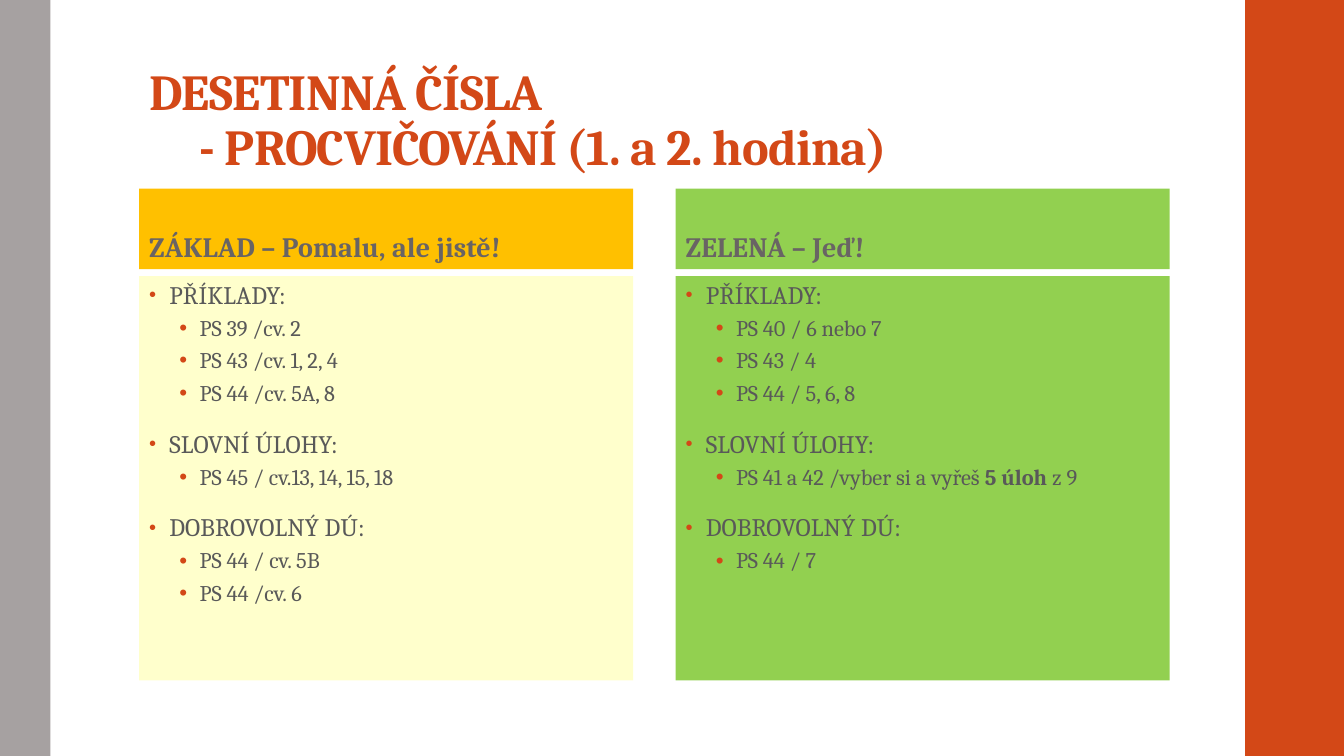
from lxml import etree
from pptx import Presentation
from pptx.dml.color import RGBColor
from pptx.enum.shapes import MSO_SHAPE
from pptx.enum.text import MSO_ANCHOR, MSO_AUTO_SIZE, PP_ALIGN
from pptx.oxml.ns import qn
from pptx.util import Inches, Pt

RECT = MSO_SHAPE.RECTANGLE
TOP, BOTTOM = MSO_ANCHOR.TOP, MSO_ANCHOR.BOTTOM
LEFT = PP_ALIGN.LEFT
NO_FIT = MSO_AUTO_SIZE.NONE

WIDTH, HEIGHT = 13.33, 7.5
COL_LEFT, COL_WIDTH, COL_STEP = 1.38, 4.9, 5.32
HEAD_ROW = (1.87, 0.8)
LIST_ROW = (2.74, 4.01)
ACCENT, GREY, HEAD_INK, INK = "D34817", "A6A1A1", "696464", "595959"

# Heading, heading fill, list fill, topics with their tasks; *bold* marks bold
COLUMNS = [
    ("ZÁKLAD – Pomalu, ale jistě!", "FFC000", "FFFFCC", {
        "PŘÍKLADY:": ["PS 39 /cv. 2", "PS 43 /cv. 1, 2, 4", "PS 44 /cv. 5A, 8"],
        "SLOVNÍ ÚLOHY:": ["PS 45 / cv.13, 14, 15, 18"],
        "DOBROVOLNÝ DÚ:": ["PS 44 / cv. 5B", "PS 44 /cv. 6"],
    }),
    ("ZELENÁ – Jeď!", "92D050", "92D050", {
        "PŘÍKLADY:": ["PS 40 / 6 nebo 7", "PS 43 / 4", "PS 44 / 5, 6, 8"],
        "SLOVNÍ ÚLOHY:": ["PS 41 a 42 /vyber si a vyřeš *5 úloh *z 9"],
        "DOBROVOLNÝ DÚ:": ["PS 44 / 7"],
    }),
]


def paint(fill, color):
    fill.solid()
    fill.fore_color.rgb = RGBColor.from_string(color)


def place(shape, left, top, width, height):
    shape.left, shape.top = Inches(left), Inches(top)
    shape.width, shape.height = Inches(width), Inches(height)


def add_bar(slide, left, width, color):
    """Add a full-height side bar behind everything else."""
    bar = slide.shapes.add_shape(
        RECT, Inches(left), 0, Inches(width), Inches(HEIGHT))
    bar.shadow.inherit = False
    paint(bar.fill, color)
    bar.line.fill.background()
    slide.shapes._spTree.insert(2, bar._element)


def set_frame(shape, anchor):
    frame = shape.text_frame
    frame.word_wrap = True
    frame.auto_size = NO_FIT
    frame.vertical_anchor = anchor
    return frame


def set_font(par, size, color, bold, track):
    """Style a whole paragraph; track is letter spacing in 1/100 pt."""
    font = par.font
    font.name, font.size, font.bold = "Cambria", Pt(size), bold
    font.color.rgb = RGBColor.from_string(color)
    font._element.set("spc", str(track))


def set_space(par, line, before, after):
    par.alignment = LEFT
    par.line_spacing = line
    par.space_before, par.space_after = Pt(before), Pt(after)


def set_bullet(par, indent, share):
    """Add a hanging accent bullet, share being its size in percent."""
    props = par._p.get_or_add_pPr()
    props.set("marL", str(Inches(indent)))
    props.set("indent", str(Inches(-0.2)))
    color = etree.SubElement(props, qn("a:buClr"))
    etree.SubElement(color, qn("a:srgbClr"), val=ACCENT)
    etree.SubElement(props, qn("a:buSzPct"), val=str(share * 1000))
    etree.SubElement(props, qn("a:buFont"), typeface="Arial")
    etree.SubElement(props, qn("a:buChar"), char="•")


def add_title(shape):
    place(shape, COL_LEFT, 0.32, 10.95, 1.48)
    frame = set_frame(shape, BOTTOM)
    frame.margin_top = Inches(0.03)
    frame.text = "DESETINNÁ ČÍSLA\v\t- PROCVIČOVÁNÍ (1. a 2. hodina)"
    par = frame.paragraphs[0]
    set_space(par, 0.9, 0, 0)
    set_font(par, 36, ACCENT, True, -50)


def add_head(shape, left, text, color):
    place(shape, left, HEAD_ROW[0], COL_WIDTH, HEAD_ROW[1])
    paint(shape.fill, color)
    frame = set_frame(shape, BOTTOM)
    frame.text = text
    par = frame.paragraphs[0]
    set_space(par, 0.95, 0, 2)
    set_font(par, 20, HEAD_INK, True, 10)


def fill_item(par, text, level):
    for i, part in enumerate(text.split("*")):
        run = par.add_run()
        run.text = part
        if i % 2:
            run.font.bold = True
    par.level = level
    if level:
        set_space(par, 0.9, 3, 3)
        set_bullet(par, 0.5, 100)
        set_font(par, 16, INK, False, 0)
    else:
        set_space(par, 0.95, 14, 2)
        set_bullet(par, 0.2, 80)
        set_font(par, 18, INK, False, 10)


def add_list(shape, left, topics, color):
    place(shape, left, LIST_ROW[0], COL_WIDTH, LIST_ROW[1])
    paint(shape.fill, color)
    frame = set_frame(shape, TOP)
    items = []
    for topic, tasks in topics.items():
        items += [(topic, 0)] + [(task, 1) for task in tasks]
    for i, (text, level) in enumerate(items):
        par = frame.add_paragraph() if i else frame.paragraphs[0]
        fill_item(par, text, level)


def main():
    deck = Presentation()
    deck.slide_width, deck.slide_height = Inches(WIDTH), Inches(HEIGHT)
    slide = deck.slides.add_slide(deck.slide_layouts.get_by_name("Comparison"))
    add_bar(slide, 0, 0.5, GREY)
    add_bar(slide, 12.35, WIDTH - 12.35, ACCENT)
    title, *bodies = slide.placeholders
    add_title(title)
    for i, (head, head_fill, list_fill, topics) in enumerate(COLUMNS):
        left = COL_LEFT + i * COL_STEP
        add_head(bodies[2 * i], left, head, head_fill)
        add_list(bodies[2 * i + 1], left, topics, list_fill)
    deck.save("out.pptx")


if __name__ == "__main__":
    main()
